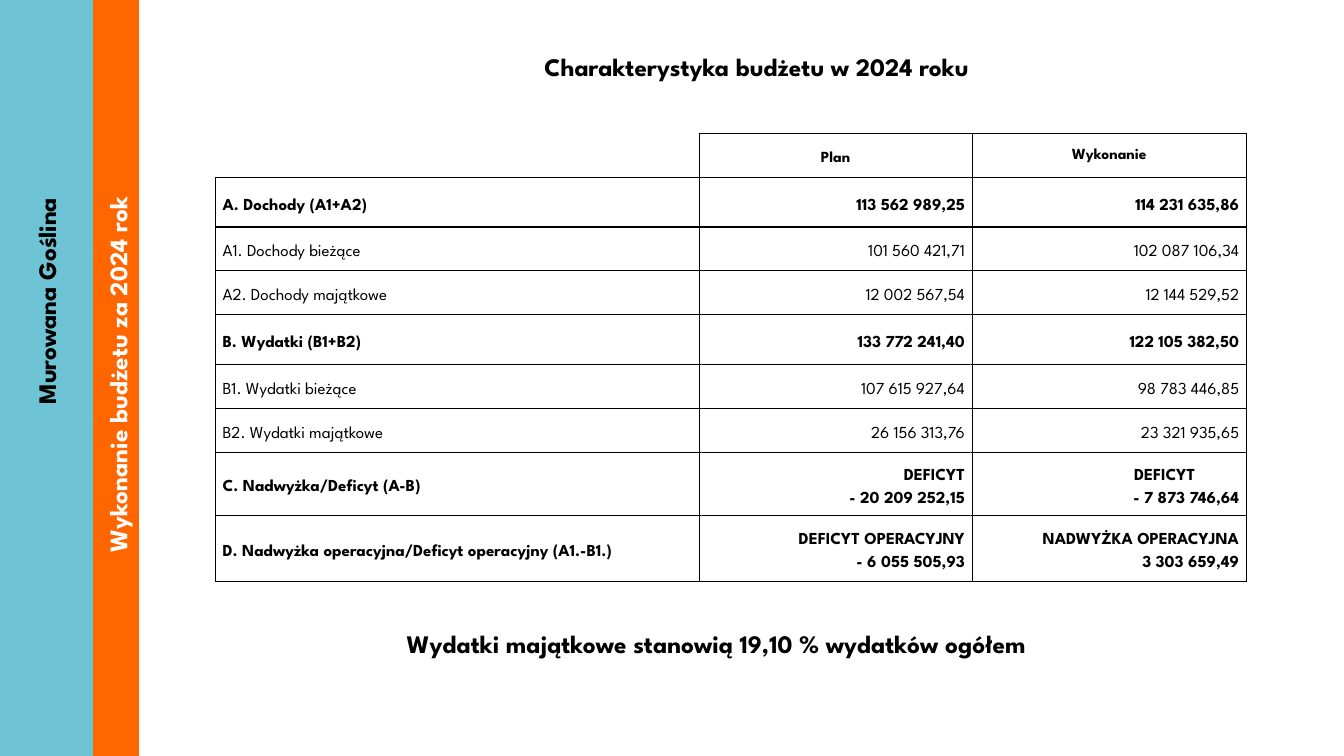
import pptx
import pptx.dml.color
import pptx.enum.shapes
import pptx.enum.text
import pptx.oxml
import pptx.oxml.ns
import pptx.util
from pptx.util import Cm

RGBColor = pptx.dml.color.RGBColor
ALIGN = pptx.enum.text.PP_ALIGN
ANCHOR = pptx.enum.text.MSO_ANCHOR
FONT = "League Spartan"
BLACK = RGBColor(0x00, 0x00, 0x00)
WHITE = RGBColor(0xFF, 0xFF, 0xFF)
TEAL = RGBColor(0x6E, 0xC4, 0xD5)
ORANGE = RGBColor(0xFF, 0x66, 0x00)

WIDTHS = (12.19, 6.88, 6.91)
HEIGHTS = (1.12, 1.24, 1.1, 1.11, 1.26, 1.11, 1.11, 1.57, 1.68)
BOLD_ROWS = (0, 1, 4, 7, 8)
ROWS = (
    ("", "Plan", "Wykonanie"),
    ("A. Dochody (A1+A2)", "113 562 989,25", "114 231 635,86"),
    ("A1. Dochody bieżące", "101 560 421,71", "102 087 106,34"),
    ("A2. Dochody majątkowe", "12 002 567,54", "12 144 529,52"),
    ("B. Wydatki (B1+B2)", "133 772 241,40", "122 105 382,50"),
    ("B1. Wydatki bieżące", "107 615 927,64", "98 783 446,85"),
    ("B2. Wydatki majątkowe", "26 156 313,76", "23 321 935,65"),
    ("C. Nadwyżka/Deficyt (A-B)", "DEFICYT\n- 20 209 252,15",
     "DEFICYT\n- 7 873 746,64"),
    ("D. Nadwyżka operacyjna/Deficyt operacyjny (A1.-B1.)",
     "DEFICYT OPERACYJNY\n- 6 055 505,93",
     "NADWYŻKA OPERACYJNA\n3 303 659,49"),
)


def add_run(para, text, size, color=BLACK, bold=True):
    run = para.add_run()
    run.text = text
    font = run.font
    font.name, font.size, font.bold = FONT, pptx.util.Pt(size), bold
    font.color.rgb = color


def add_band(slide, left, width, color):
    band = slide.shapes.add_shape(
        pptx.enum.shapes.MSO_SHAPE.RECTANGLE, Cm(left), 0, Cm(width), Cm(19.05))
    band.shadow.inherit = False
    band.fill.solid()
    band.fill.fore_color.rgb = color
    band.line.fill.background()


def set_line(shape, text, align, color=BLACK, anchor=ANCHOR.TOP, wrap=True):
    """Fill a text shape with one bold heading line."""
    frame = shape.text_frame
    frame.word_wrap = wrap
    frame.auto_size = pptx.enum.text.MSO_AUTO_SIZE.SHAPE_TO_FIT_TEXT
    frame.vertical_anchor = anchor
    para = frame.paragraphs[0]
    para.alignment = align
    add_run(para, text, 18, color)


def add_label(slide, left, top, width):
    return slide.shapes.add_textbox(Cm(left), Cm(top), Cm(width), Cm(1.03))


def add_edge(cell, side, shown):
    fill = '<a:solidFill><a:srgbClr val="000000"/></a:solidFill>'
    cell._tc.get_or_add_tcPr().append(pptx.oxml.parse_xml(
        f'<a:ln{side} {pptx.oxml.ns.nsdecls("a")} w="12700">'
        f'{fill if shown else "<a:noFill/>"}</a:ln{side}>'))


def fill_cell(cell, text, row, col):
    head = row == 0
    for side in "LRTB":
        add_edge(cell, side, row + col > 0 or side in "RB")
    cell.fill.background()
    cell.vertical_anchor = ANCHOR.MIDDLE
    cell.margin_left = cell.margin_right = Cm(0.13 if head else 0.18)
    cell.margin_top = cell.margin_bottom = 0
    if not text:
        return
    frame = cell.text_frame
    for num, part in enumerate(text.split("\n")):
        para = frame.add_paragraph() if num else frame.paragraphs[0]
        para.alignment = ALIGN.CENTER if head else ALIGN.RIGHT if col else ALIGN.LEFT
        para.line_spacing = 1.0 if head and col == 2 else 1.5
        if col == 2 and part == "DEFICYT":
            para.alignment = ALIGN.LEFT
            para._p.get_or_add_pPr().set("marL", str(Cm(3.9)))
        add_run(para, part, 11 if head else 12, bold=row in BOLD_ROWS)


def add_budget(slide):
    table = slide.shapes.add_table(
        len(ROWS), len(WIDTHS), Cm(5.43), Cm(3.36),
        Cm(sum(WIDTHS)), Cm(sum(HEIGHTS))).table
    table.first_row = table.horz_banding = False
    for column, width in zip(table.columns, WIDTHS):
        column.width = Cm(width)
    for row, texts in enumerate(ROWS):
        table.rows[row].height = Cm(HEIGHTS[row])
        for col, text in enumerate(texts):
            fill_cell(table.cell(row, col), text, row, col)


def main():
    deck = pptx.Presentation()
    deck.slide_width, deck.slide_height = Cm(33.87), Cm(19.05)
    slide = deck.slides.add_slide(deck.slide_layouts[5])

    add_band(slide, 0, 2.35, TEAL)
    town = add_label(slide, -2.03, 6.73, 6.4)
    town.rotation = 270
    set_line(town, "Murowana Goślina", ALIGN.LEFT, wrap=False)

    add_band(slide, 2.35, 1.15, ORANGE)
    topic = add_label(slide, -3.91, 6.78, 13.74)
    topic.rotation = 270
    set_line(topic, "Wykonanie budżetu za 2024 rok", ALIGN.LEFT, WHITE, ANCHOR.MIDDLE)

    title = slide.shapes.title
    title.left, title.top, title.width, title.height = (
        Cm(7.32), Cm(1.17), Cm(23.5), Cm(1.03))
    set_line(title, "Charakterystyka budżetu w 2024 roku", ALIGN.CENTER)

    add_budget(slide)
    share = add_label(slide, 8.15, 15.7, 19.81)
    set_line(share, "Wydatki majątkowe stanowią 19,10 % wydatków ogółem", ALIGN.CENTER)
    deck.save("out.pptx")


if __name__ == "__main__":
    main()
